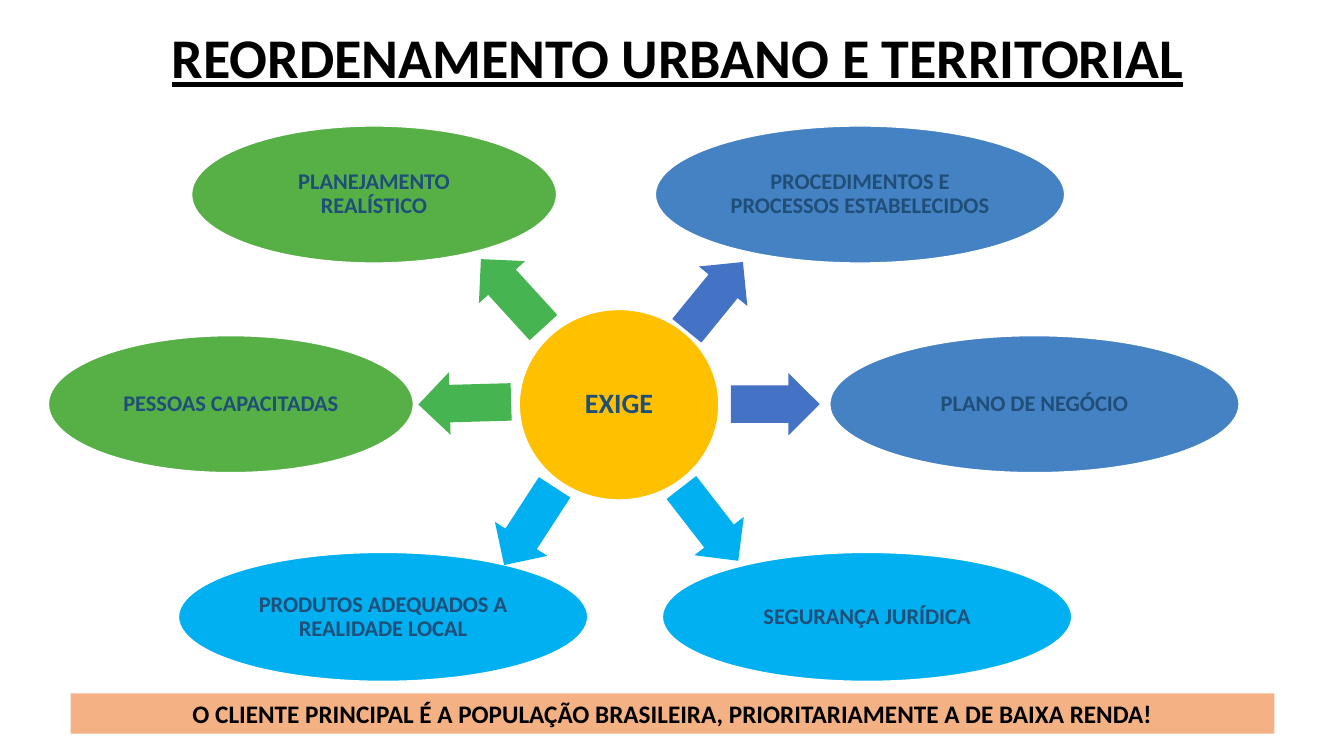
from pptx import Presentation
from pptx.dml.color import RGBColor
from pptx.enum.shapes import MSO_SHAPE
from pptx.enum.text import MSO_ANCHOR, MSO_AUTO_SIZE, PP_ALIGN
from pptx.util import Inches, Pt

OVAL, RECT, ARROW = MSO_SHAPE.OVAL, MSO_SHAPE.RECTANGLE, MSO_SHAPE.RIGHT_ARROW
TOP, MIDDLE = MSO_ANCHOR.TOP, MSO_ANCHOR.MIDDLE
CENTER = PP_ALIGN.CENTER
FIXED = MSO_AUTO_SIZE.NONE

COLORS = {
    "black": "000000", "white": "FFFFFF", "navy": "1F4E79",
    "gold": "FFC000", "green": "56B046", "leaf": "45B451",
    "blue": "4482C3", "royal": "4472C4", "sky": "00B0F0", "peach": "F4B183",
}

# Text, box, oval colour
OVALS = [
    ("PESSOAS CAPACITADAS", (0.48, 3.33, 3.62, 1.36), "green"),
    ("PLANO DE NEGÓCIO", (8.23, 3.33, 4.06, 1.36), "blue"),
    ("PROCEDIMENTOS E PROCESSOS ESTABELECIDOS", (6.5, 1.25, 4.06, 1.36), "blue"),
    ("PLANEJAMENTO REALÍSTICO", (1.9, 1.25, 3.62, 1.36), "green"),
    ("PRODUTOS ADEQUADOS A REALIDADE LOCAL", (1.77, 5.48, 4.06, 1.28), "sky"),
    ("SEGURANÇA JURÍDICA", (6.57, 5.48, 4.06, 1.28), "sky"),
]

# Box, turn in degrees, arrow colour
ARROWS = [
    ((6.65, 2.63, 0.88, 0.62), 309.2, "royal"),
    ((7.25, 3.7, 0.88, 0.62), 0, "royal"),
    ((4.15, 3.69, 0.92, 0.62), 178.4, "leaf"),
    ((4.62, 2.6, 0.92, 0.62), 227.6, "leaf"),
    ((4.79, 4.91, 0.92, 0.62), 123, "sky"),
    ((6.58, 4.89, 0.92, 0.62), 52.2, "sky"),
]


def rgb(name):
    return RGBColor.from_string(COLORS[name])


def write(shape, text, size=16, color="navy", anchor=MIDDLE, inset=(0.02, 0.02),
          spacing=0.9, underline=False):
    frame = shape.text_frame
    frame.word_wrap = True
    frame.auto_size = FIXED
    frame.vertical_anchor = anchor
    frame.margin_left = frame.margin_right = Inches(inset[0])
    frame.margin_top = frame.margin_bottom = Inches(inset[1])
    para = frame.paragraphs[0]
    para.alignment = CENTER
    para.line_spacing = spacing
    para.space_before = Pt(0)
    run = para.add_run()
    run.text = text
    font = run.font
    font.name = "Calibri"
    font.size = Pt(size)
    font.bold = True
    font.underline = underline
    font.color.rgb = rgb(color)


def draw(slide, kind, box, fill, line=None):
    shape = slide.shapes.add_shape(kind, *map(Inches, box))
    shape.shadow.inherit = False
    shape.fill.solid()
    shape.fill.fore_color.rgb = rgb(fill)
    if line:
        shape.line.color.rgb = rgb(line)
        shape.line.width = Pt(1)
    else:
        shape.line.fill.background()
    return shape


def add_title(slide, box):
    title = slide.shapes.title
    title.left, title.top, title.width, title.height = map(Inches, box)
    write(title, "REORDENAMENTO URBANO E TERRITORIAL", size=40, color="black",
          anchor=TOP, inset=(0.1, 0.05), underline=True)


def add_hub(slide, box):
    hub = draw(slide, OVAL, box, "gold", "white")
    write(hub, "EXIGE", size=20, inset=(0.03, 0.03))


def add_oval(slide, text, box, fill):
    write(draw(slide, OVAL, box, fill, "white"), text)


def add_arrow(slide, box, turn, fill):
    arrow = draw(slide, ARROW, box, fill)
    arrow.adjustments[0] = 0.6
    arrow.adjustments[1] = 0.5
    arrow.rotation = turn


def add_banner(slide, box):
    banner = draw(slide, RECT, box, "peach")
    write(banner, "O CLIENTE PRINCIPAL É A POPULAÇÃO BRASILEIRA, "
          "PRIORITARIAMENTE A DE BAIXA RENDA!",
          size=18, color="black", inset=(0.1, 0.05), spacing=1.0)


def main():
    deck = Presentation()
    deck.slide_width, deck.slide_height = Inches(13.33), Inches(7.5)
    slide = deck.slides.add_slide(deck.slide_layouts[5])
    slide.background.fill.solid()
    slide.background.fill.fore_color.rgb = rgb("white")

    add_title(slide, (0.31, 0.25, 12.82, 2.84))
    add_hub(slide, (5.15, 3.07, 1.98, 1.89))
    for item in OVALS:
        add_oval(slide, *item)
    for item in ARROWS:
        add_arrow(slide, *item)
    add_banner(slide, (0.7, 6.88, 11.94, 0.4))
    deck.save("out.pptx")


if __name__ == "__main__":
    main()
